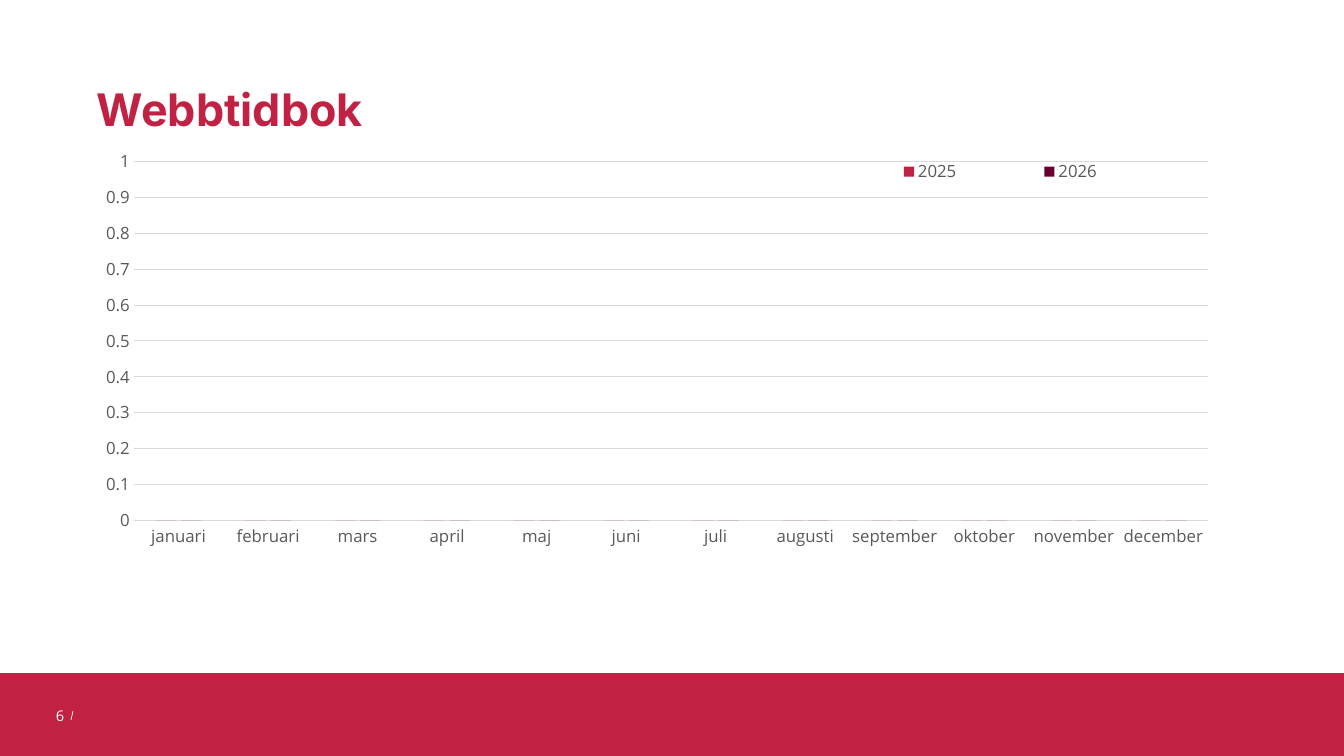
import pptx
import pptx.chart.data
import pptx.dml.color
import pptx.enum.chart
import pptx.enum.shapes
import pptx.enum.text
import pptx.oxml
import pptx.oxml.ns
import pptx.util

TITLE = "Webbtidbok"
PAGE_NUMBER = "6"
MONTHS = ["januari", "februari", "mars", "april", "maj", "juni", "juli",
          "augusti", "september", "oktober", "november", "december"]
RED, PLUM, WHITE, GREY, GRID = "C12143", "6A0032", "FFFFFF", "595959", "D9D9D9"
SERIES = [("2025", [0] * len(MONTHS), RED), ("2026", [0] * len(MONTHS), PLUM)]

SLIDE_SIZE = (1344, 756)
FOOTER_BOX = (0, 673, 1344, 83)
TITLE_BOX = (97, 9, 1111, 127)
NUMBER_BOX = (30, 696, 44, 40)
CHART_BOX = (60, 150, 1154, 481)
SLASH = (73, 711, 71, 720)
# Fractions of the chart: left, top, width, height
PLOT_LAYOUT = (0.064, 0.024, 0.931, 0.746)
LEGEND_LAYOUT = (0.66, 0.01, 0.31, 0.07)


def px(*lengths):
    """Turn pixels into EMU, at 100.8 pixels to the inch."""
    return [round(length * 914400 / 100.8) for length in lengths]


def color(value):
    return pptx.dml.color.RGBColor.from_string(value)


def style_font(font, name, size, value, bold=False):
    font.name, font.size, font.bold = name, pptx.util.Pt(size), bold
    font.color.rgb = color(value)


def style_line(line, value, width):
    line.color.rgb = color(value)
    line.width = pptx.util.Pt(width)


def add_text(slide, box, text, anchor, font):
    """Add a one-line text box and return its frame and paragraph."""
    frame = slide.shapes.add_textbox(*px(*box)).text_frame
    frame.word_wrap = True
    frame.vertical_anchor = anchor
    paragraph = frame.paragraphs[0]
    run = paragraph.add_run()
    run.text = text
    style_font(run.font, *font)
    return frame, paragraph


def manual_layout(box, inner=False):
    target = '<c:layoutTarget val="inner"/>' if inner else ""
    modes = "".join(f'<c:{axis}Mode val="edge"/>' for axis in "xy")
    sizes = "".join(f'<c:{key} val="{value}"/>' for key, value in zip("xywh", box))
    return pptx.oxml.parse_xml(
        f'<c:layout {pptx.oxml.ns.nsdecls("c")}><c:manualLayout>'
        f"{target}{modes}{sizes}</c:manualLayout></c:layout>")


def place(parent, layout, before):
    """Put a layout into a chart element, ahead of the named child."""
    for old in parent.findall(pptx.oxml.ns.qn("c:layout")):
        parent.remove(old)
    parent.find(pptx.oxml.ns.qn(before)).addprevious(layout)


def add_bookings_chart(slide):
    data = pptx.chart.data.CategoryChartData()
    data.categories = MONTHS
    for name, values, _ in SERIES:
        data.add_series(name, values)
    kind = pptx.enum.chart.XL_CHART_TYPE.COLUMN_CLUSTERED
    chart = slide.shapes.add_chart(kind, *px(*CHART_BOX), data).chart
    chart.has_title = False
    style_font(chart.font, "Open Sans", 10, "000000")

    plot = chart.plots[0]
    plot.gap_width, plot.overlap = 219, -27
    plot.vary_by_categories = False
    for series, (_, _, fill) in zip(plot.series, SERIES):
        series.format.fill.solid()
        series.format.fill.fore_color.rgb = color(fill)

    months, scale = chart.category_axis, chart.value_axis
    for axis in (months, scale):
        axis.major_tick_mark = axis.minor_tick_mark = pptx.enum.chart.XL_TICK_MARK.NONE
        style_font(axis.tick_labels.font, "Open Sans", 12, GREY)
    style_line(months.format.line, GRID, 0.75)
    scale.format.line.fill.background()
    scale.minimum_scale, scale.maximum_scale, scale.major_unit = 0, 1, 0.1
    scale.has_major_gridlines = True
    style_line(scale.major_gridlines.format.line, GRID, 0.75)

    chart.has_legend = True
    legend = chart.legend
    legend.position = pptx.enum.chart.XL_LEGEND_POSITION.BOTTOM
    legend.include_in_layout = False
    style_font(legend.font, "Open Sans", 12, GREY)
    plot_area = scale._element.getparent()
    place(plot_area, manual_layout(PLOT_LAYOUT, inner=True), "c:barChart")
    place(legend._element, manual_layout(LEGEND_LAYOUT), "c:overlay")


def add_footer(slide):
    band = slide.shapes.add_shape(
        pptx.enum.shapes.MSO_SHAPE.RECTANGLE, *px(*FOOTER_BOX))
    band.shadow.inherit = False
    band.fill.solid()
    band.fill.fore_color.rgb = color(RED)
    band.line.fill.background()
    slash = slide.shapes.add_connector(
        pptx.enum.shapes.MSO_CONNECTOR.STRAIGHT, *px(*SLASH))
    style_line(slash.line, WHITE, 0.5)
    slash._element.spPr.append(pptx.oxml.parse_xml(
        f'<a:effectLst {pptx.oxml.ns.nsdecls("a")}/>'))
    _, paragraph = add_text(slide, NUMBER_BOX, PAGE_NUMBER,
                            pptx.enum.text.MSO_ANCHOR.MIDDLE,
                            ("Open Sans", 10.5, WHITE))
    paragraph.alignment = pptx.enum.text.PP_ALIGN.RIGHT


def add_title(slide):
    frame, paragraph = add_text(slide, TITLE_BOX, TITLE,
                                pptx.enum.text.MSO_ANCHOR.BOTTOM,
                                ("Inter", 32, RED, True))
    frame.margin_left = frame.margin_right = 0
    frame.margin_top = frame.margin_bottom = 0
    paragraph.line_spacing = 0.9


def main():
    presentation = pptx.Presentation()
    presentation.slide_width, presentation.slide_height = px(*SLIDE_SIZE)
    slide = presentation.slides.add_slide(presentation.slide_layouts[6])
    add_footer(slide)
    add_title(slide)
    add_bookings_chart(slide)
    presentation.save("out.pptx")


if __name__ == "__main__":
    main()
